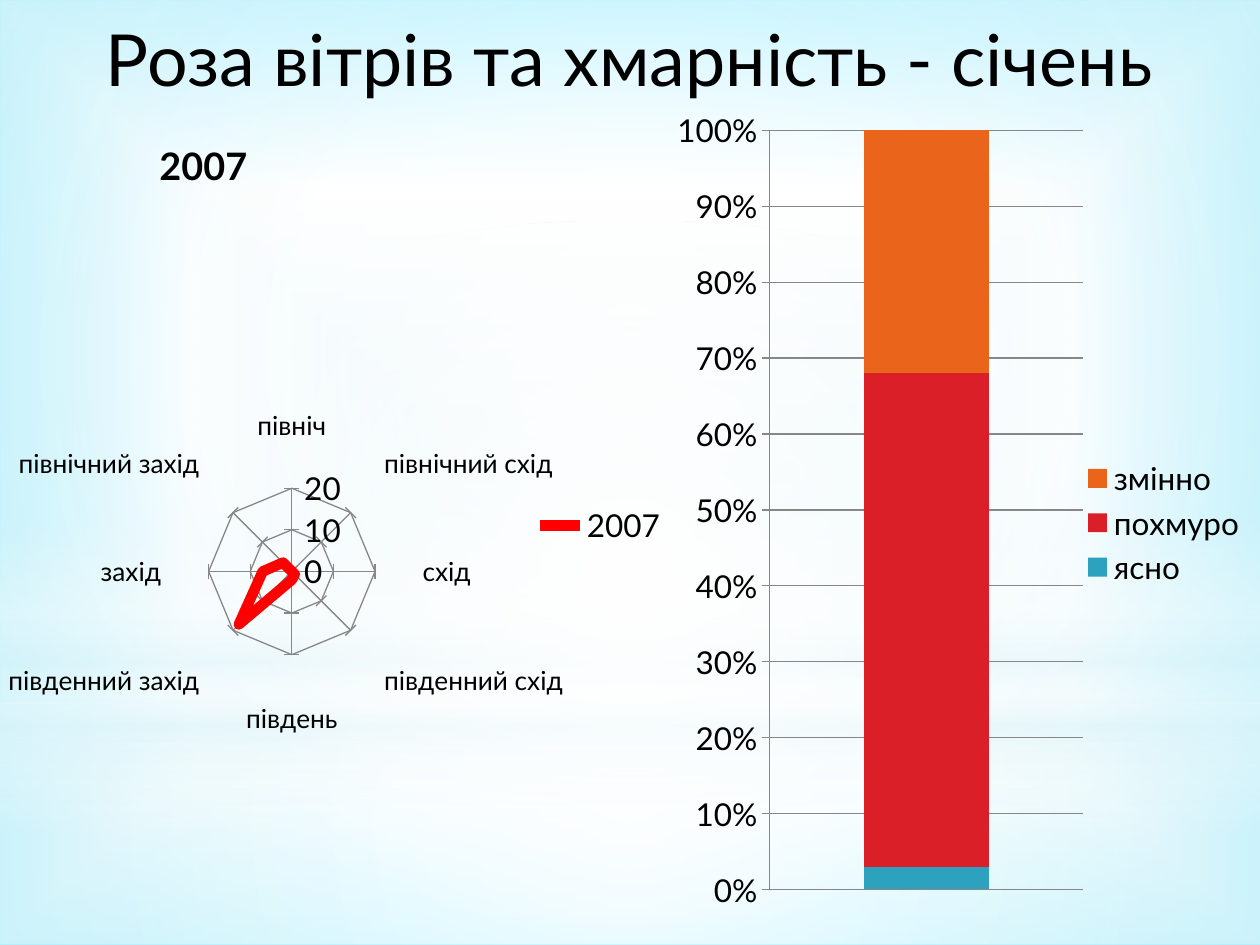
from lxml import etree
from pptx import Presentation
from pptx.chart.data import CategoryChartData
from pptx.dml.color import RGBColor
from pptx.enum.chart import XL_CHART_TYPE, XL_LEGEND_POSITION, XL_TICK_LABEL_POSITION, XL_TICK_MARK
from pptx.enum.shapes import MSO_SHAPE
from pptx.enum.text import MSO_ANCHOR, PP_ALIGN
from pptx.oxml import parse_xml
from pptx.oxml.ns import nsdecls, qn
from pptx.util import Pt

RADAR, STACKED = XL_CHART_TYPE.RADAR, XL_CHART_TYPE.COLUMN_STACKED_100
RIGHT = XL_LEGEND_POSITION.RIGHT
CROSS, NO_TICK = XL_TICK_MARK.CROSS, XL_TICK_MARK.NONE
LOW_LABELS = XL_TICK_LABEL_POSITION.NEXT_TO_AXIS
RECTANGLE, OVAL = MSO_SHAPE.RECTANGLE, MSO_SHAPE.OVAL
MIDDLE, CENTER = MSO_ANCHOR.MIDDLE, PP_ALIGN.CENTER

BLACK = RGBColor(0x00, 0x00, 0x00)
GREY = RGBColor(0x87, 0x87, 0x87)
RED = RGBColor(0xFF, 0x00, 0x00)
TEAL = RGBColor(0x2D, 0xA2, 0xBF)
CRIMSON = RGBColor(0xDA, 0x1F, 0x28)
ORANGE = RGBColor(0xEB, 0x64, 0x1B)
WHITE = RGBColor(0xFF, 0xFF, 0xFF)
MIST = RGBColor(0xDE, 0xF5, 0xFA)
PALE = RGBColor(0xCD, 0xEF, 0xF7)
SKY = RGBColor(0x7C, 0xE7, 0xFF)

WIDTH, HEIGHT = 720, 540
WINDS = ["північ", "північний схід", "схід", "південний схід",
         "південь", "південний захід", "захід", "північний захід"]
WIND_DAYS = [0, 0, 0, 1, 2, 18, 7, 3]
CLOUDS = [("ясно", 3, TEAL), ("похмуро", 65, CRIMSON), ("змінно", 32, ORANGE)]


def set_gradient(properties, stops, shade):
    """Replace a solid fill; stops are (position %, colour, opacity %)."""
    marks = "".join(
        f'<a:gs pos="{place * 1000}"><a:srgbClr val="{color}">'
        f'<a:alpha val="{opacity * 1000}"/></a:srgbClr></a:gs>'
        for place, color, opacity in stops)
    if shade == "linear":
        direction = '<a:lin ang="5400000" scaled="0"/>'
    else:
        direction = (f'<a:path path="{shade}"><a:fillToRect l="50000" t="50000" '
                     'r="50000" b="50000"/></a:path>')
    gradient = parse_xml(f'<a:gradFill {nsdecls("a")} rotWithShape="1">'
                         f'<a:gsLst>{marks}</a:gsLst>{direction}</a:gradFill>')
    properties.replace(properties.find(qn("a:solidFill")), gradient)


def set_layout(parent, index, **values):
    """Give a chart part a manual layout, as fractions of the chart."""
    for old in parent.findall(qn("c:layout")):
        parent.remove(old)
    layout = etree.Element(qn("c:layout"))
    manual = etree.SubElement(layout, qn("c:manualLayout"))
    for name, value in values.items():
        etree.SubElement(manual, qn(f"c:{name}")).set("val", str(value))
    parent.insert(index, layout)


class SlideBuilder:
    font_name = "Lato"
    chart_size = 18

    def __init__(self, page):
        self.page = page

    def style(self, font, size, bold=False):
        font.name, font.size, font.bold = self.font_name, Pt(size), bold
        font.color.rgb = BLACK

    def background(self, stops):
        fill = self.page.background.fill
        fill.solid()
        fill.fore_color.rgb = WHITE
        set_gradient(self.page._element.cSld.bg.bgPr, stops, "shape")

    def glow(self, kind, top, height, stops, shade="circle"):
        shape = self.page.shapes.add_shape(kind, 0, Pt(top), Pt(WIDTH), Pt(height))
        shape.shadow.inherit = False
        shape.line.fill.background()
        shape.fill.solid()
        set_gradient(shape._element.spPr, stops, shade)

    def title(self, text, height, size):
        box = self.page.shapes.add_textbox(0, 0, Pt(WIDTH), Pt(height))
        frame = box.text_frame
        frame.word_wrap = True
        frame.vertical_anchor = MIDDLE
        para = frame.paragraphs[0]
        para.text, para.alignment = text, CENTER
        self.style(para.font, size)

    def chart(self, kind, left, top, width, height, categories, series):
        data = CategoryChartData()
        data.categories = categories
        for name, values in series:
            data.add_series(name, values)
        chart = self.page.shapes.add_chart(
            kind, Pt(left), Pt(top), Pt(width), Pt(height), data).chart
        self.style(chart.font, self.chart_size)
        chart.has_title = False
        chart.has_legend = True
        chart.legend.position = RIGHT
        chart.legend.include_in_layout = False
        chart.plots[0].vary_by_categories = False
        axis = chart.value_axis
        axis.has_major_gridlines = True
        axis.major_tick_mark, axis.minor_tick_mark = CROSS, NO_TICK
        axis.tick_label_position = LOW_LABELS
        for line in (axis.format.line, axis.major_gridlines.format.line):
            line.color.rgb, line.width = GREY, Pt(0.75)
        return chart

    def wind_rose(self, name, left, top, width, height):
        chart = self.chart(RADAR, left, top, width, height, WINDS, [(name, WIND_DAYS)])
        chart.has_title = True
        para = chart.chart_title.text_frame.paragraphs[0]
        para.text = name
        self.style(para.font, 21.6, bold=True)
        set_layout(chart.chart_title._element, 1,
                   xMode="edge", yMode="edge", x=0.22, y=0.03)
        chart.value_axis.minimum_scale, chart.value_axis.maximum_scale = 0, 20
        chart.value_axis.major_unit = 10
        axis = chart.category_axis
        axis.has_major_gridlines = True
        axis.major_gridlines.format.line.color.rgb = GREY
        self.style(axis.tick_labels.font, 15)
        line = chart.plots[0].series[0].format.line
        line.color.rgb, line.width = RED, Pt(6)

    def cloud_column(self, left, top, width, height):
        series = [(name, [share]) for name, share, _ in CLOUDS]
        chart = self.chart(STACKED, left, top, width, height, ["1"], series)
        plot = chart.plots[0]
        plot.overlap, plot.gap_width = 100, 150
        for item, (_, _, color) in zip(plot.series, CLOUDS):
            item.format.fill.solid()
            item.format.fill.fore_color.rgb = color
        chart.category_axis.visible = False
        labels = chart.value_axis.tick_labels
        labels.number_format, labels.number_format_is_linked = "0%", False
        chart.value_axis.major_unit = 0.1
        set_layout(chart._chartSpace.chart.plotArea, 0, layoutTarget="inner",
                   xMode="edge", yMode="edge", x=0.17, y=0.04, w=0.53, h=0.89)


def main():
    deck = Presentation()
    deck.slide_width, deck.slide_height = Pt(WIDTH), Pt(HEIGHT)
    builder = SlideBuilder(deck.slides.add_slide(deck.slide_layouts[6]))
    builder.background([(0, PALE, 45), (60, WHITE, 100), (100, SKY, 100)])
    builder.glow(RECTANGLE, 402, 138, [(0, WHITE, 91), (37, WHITE, 76), (100, MIST, 79)])
    builder.glow(RECTANGLE, 0, 402, [(0, WHITE, 89), (48, WHITE, 62), (100, MIST, 79)])
    builder.glow(RECTANGLE, 297, 180,
                 [(0, WHITE, 0), (29, WHITE, 30), (45, MIST, 40),
                  (55, WHITE, 26), (65, MIST, 60), (100, WHITE, 0)], "linear")
    builder.glow(OVAL, 126, 402, [(0, WHITE, 100), (56, WHITE, 0)])
    builder.title("Роза вітрів та хмарність - січень", 66, 41)
    builder.wind_rose("2007", 2, 60.5, 387, 479.5)
    builder.cloud_column(382.5, 55, 337.5, 487.5)
    deck.save("out.pptx")


if __name__ == "__main__":
    main()
